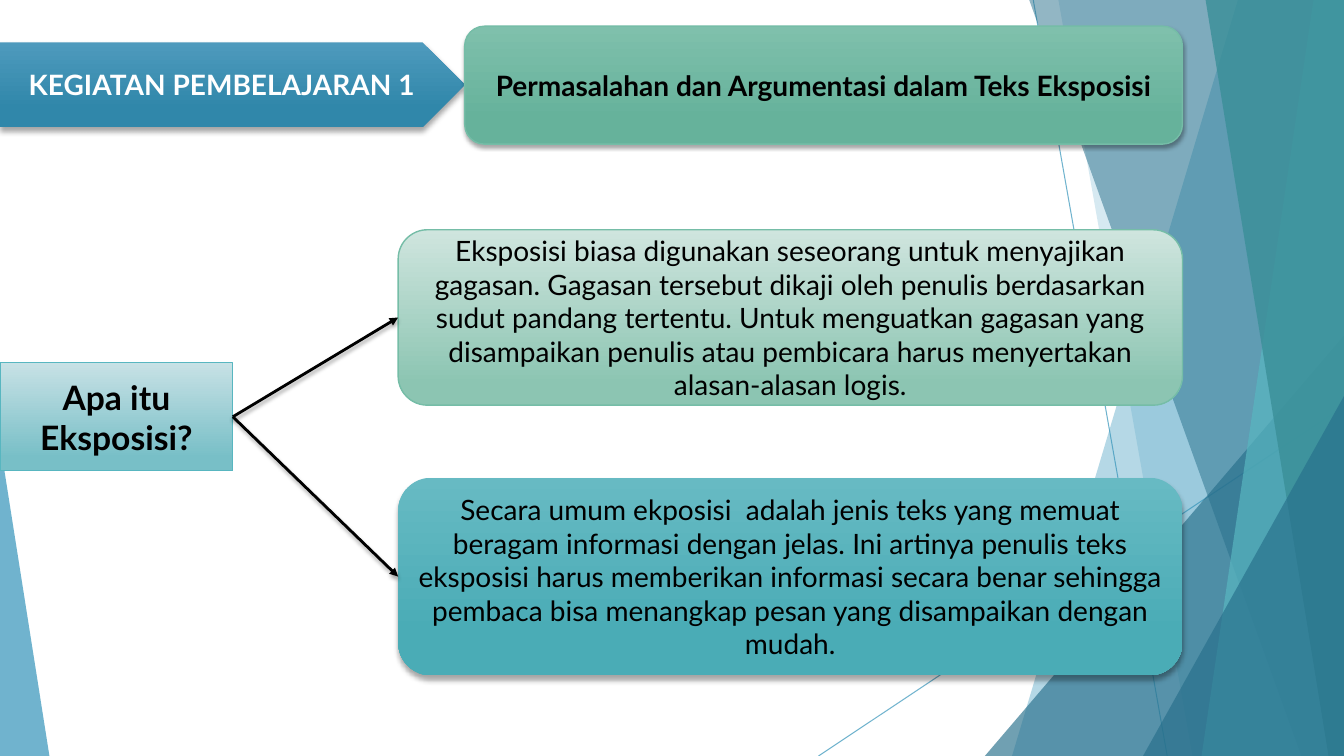
from dataclasses import dataclass

from lxml import etree
from pptx import Presentation
from pptx.dml.color import RGBColor
from pptx.enum.shapes import MSO_CONNECTOR, MSO_SHAPE
from pptx.enum.text import MSO_ANCHOR, MSO_AUTO_SIZE, PP_ALIGN
from pptx.oxml.ns import qn
from pptx.util import Inches, Pt

STRAIGHT = MSO_CONNECTOR.STRAIGHT
RECT = MSO_SHAPE.RECTANGLE
ROUNDED = MSO_SHAPE.ROUNDED_RECTANGLE
TRIANGLE = MSO_SHAPE.ISOSCELES_TRIANGLE
TAG = MSO_SHAPE.PENTAGON
TITLE_CARD = MSO_SHAPE.FLOWCHART_ALTERNATE_PROCESS
MIDDLE = MSO_ANCHOR.MIDDLE
NO_AUTOFIT = MSO_AUTO_SIZE.NONE
CENTER = PP_ALIGN.CENTER
LEFT_SITE, RIGHT_SITE = 1, 3


@dataclass(frozen=True)
class Theme:
    font: str = "Lato"
    body: int = 20
    question: int = 24
    black: str = "000000"
    white: str = "FFFFFF"
    blue: str = "3494BA"
    navy: str = "276F8B"
    aqua: str = "58B6C0"
    teal: str = "3A8F98"
    green: str = "75BDA7"
    # Gradients: top colour, bottom colour, position of the bottom stop
    tag: tuple = ("4E9ABD", "3087AA", 0.78)
    title: tuple = ("7FC0AC", "66B29B", 0.78)
    pale_aqua: tuple = ("C7E1E5", "78BFC7", 0.88)
    pale_green: tuple = ("CFE5DE", "8CC5B2", 0.88)
    deep_aqua: tuple = ("67BAC3", "4AACB6", 0.78)


@dataclass(frozen=True)
class Box:
    x: float
    y: float
    w: float
    h: float

    def inner(self, x, y, w, h):
        """Inner box, given in percent of this one."""
        return Box(self.x + self.w * x / 100, self.y + self.h * y / 100,
                   self.w * w / 100, self.h * h / 100)

    def point(self, x, y):
        corner = self.inner(x, y, 0, 0)
        return int(corner.x), int(corner.y)

    def emu(self):
        return int(self.x), int(self.y), int(self.w), int(self.h)


THEME = Theme()


def rgb(color):
    return RGBColor.from_string(color)


def set_alpha(sp, percent):
    for color in sp._element.spPr.iter(qn("a:srgbClr")):
        etree.SubElement(color, qn("a:alpha"), val=str(percent * 1000))


def set_shadow(sp, blur, distance):
    spPr = sp._element.spPr
    effects = spPr.find(qn("a:effectLst"))
    if effects is None:
        effects = etree.SubElement(spPr, qn("a:effectLst"))
    if blur:
        shadow = etree.SubElement(effects, qn("a:outerShdw"), blurRad=str(Pt(blur)),
                                  dist=str(Pt(distance)), dir="5400000", rotWithShape="0")
        color = etree.SubElement(shadow, qn("a:srgbClr"), val=THEME.black)
        etree.SubElement(color, qn("a:alpha"), val="35000")


def write(sp, text, size, color, bold=False):
    tf = sp.text_frame
    tf.word_wrap = True
    tf.auto_size = NO_AUTOFIT
    tf.vertical_anchor = MIDDLE
    p = tf.paragraphs[0]
    p.text = text
    p.alignment = CENTER
    p.font.name, p.font.size, p.font.bold = THEME.font, Pt(size), bold
    p.font.color.rgb = rgb(color)


def add_card(s, kind, box, gradient, line=None, shadow=(0, 0)):
    sp = s.shapes.add_shape(kind, *box.emu())
    sp.shadow.inherit = False
    top, bottom, end = gradient
    sp.fill.gradient()
    sp.fill.gradient_angle = 270
    for stop, color, position in zip(sp.fill.gradient_stops, (top, bottom), (0, end)):
        stop.color.rgb = rgb(color)
        stop.position = position
    if line:
        sp.line.color.rgb = rgb(line)
        sp.line.width = Pt(1)
    else:
        sp.line.fill.background()
    set_shadow(sp, *shadow)
    return sp


def add_line(s, start, end, color, width):
    line = s.shapes.add_connector(STRAIGHT, *start, *end)
    line.line.color.rgb = rgb(color)
    line.line.width = Pt(width)
    return line


def paint_facet(sp, color, alpha):
    sp.shadow.inherit = False
    sp.fill.solid()
    sp.fill.fore_color.rgb = rgb(color)
    sp.line.fill.background()
    set_alpha(sp, alpha)


def add_strip(s, box, top, bottom, color, alpha):
    """Facet from a slanted left edge to the right side of the box."""
    builder = s.shapes.build_freeform(*box.point(top, 0))
    builder.add_line_segments([box.point(100, 0), box.point(100, 100), box.point(bottom, 100)])
    paint_facet(builder.convert_to_shape(), color, alpha)


def add_triangle(s, box, apex, color, alpha):
    sp = s.shapes.add_shape(TRIANGLE, *box.emu())
    sp.adjustments[0] = apex
    paint_facet(sp, color, alpha)


def add_backdrop(s, box):
    # Thin crossing lines
    for start, end in (((76.88, 0), (86.85, 100)), ((100, 53.73), (60.9, 100))):
        line = add_line(s, box.point(*start), box.point(*end), THEME.blue, 0.75)
        set_alpha(line, 70)
        set_shadow(line, 0, 0)
    # Overlapping facets on the right
    add_strip(s, box, 92.1, 75.3, THEME.blue, 36)
    add_strip(s, box, 78.75, 88.73, THEME.blue, 20)
    add_triangle(s, box.inner(73.28, 44.4, 26.72, 55.6), 1, THEME.navy, 66)
    add_strip(s, box, 76.58, 96.83, THEME.navy, 50)
    add_strip(s, box, 97.73, 89.4, THEME.aqua, 70)
    add_strip(s, box, 89.7, 98.85, THEME.teal, 80)
    add_triangle(s, box.inner(85.05, 52.4, 14.95, 47.6), 1, THEME.navy, 66)
    # Facet in the lower left corner
    add_triangle(s, box.inner(0, 58.53, 3.68, 41.47), 0, THEME.blue, 70)


def add_header(s, box, tag_text, title_text):
    tag = add_card(s, TAG, box.inner(0, 13.68, 39.3, 71.8), THEME.tag, shadow=(4, 3))
    write(tag, tag_text, THEME.body, THEME.white, bold=True)
    title_box = box.inner(39.3, 0, 60.7, 100)
    add_card(s, TITLE_CARD, title_box, THEME.title, THEME.green, (3, 2))
    # Title placeholder, raised above its card
    title = s.shapes.title
    title.left, title.top, title.width, title.height = title_box.emu()
    write(title, title_text, THEME.body, THEME.black, bold=True)
    s.shapes._spTree.append(title._element)


def add_definitions(s, box, question_text, usage_text, meaning_text):
    question = add_card(s, RECT, box.inner(0, 29.86, 19.69, 24.21), THEME.pale_aqua, THEME.aqua)
    write(question, question_text, THEME.question, THEME.black, bold=True)
    usage = add_card(s, ROUNDED, box.inner(33.67, 0, 66.33, 39.37), THEME.pale_green, THEME.green)
    meaning = add_card(s, ROUNDED, box.inner(33.67, 55.66, 66.33, 44.34), THEME.deep_aqua,
                       shadow=(4, 3))
    # Answers and the arrows leading to them
    for card, text in ((usage, usage_text), (meaning, meaning_text)):
        write(card, text, THEME.body, THEME.black)
        arrow = add_line(s, (0, 0), (0, 0), THEME.black, 2)
        arrow.begin_connect(question, RIGHT_SITE)
        arrow.end_connect(card, LEFT_SITE)
        etree.SubElement(arrow.line._get_or_add_ln(), qn("a:tailEnd"), type="triangle")
        set_shadow(arrow, 3, 2)


def main():
    prs = Presentation()
    prs.slide_width, prs.slide_height = Inches(13.33), Inches(7.5)
    s = prs.slides.add_slide(prs.slide_layouts[5])
    page = Box(0, 0, prs.slide_width, prs.slide_height)
    add_backdrop(s, page)
    add_definitions(
        s, page.inner(0, 30.4, 87.98, 58.93),
        "Apa itu Eksposisi?",
        "Eksposisi biasa digunakan seseorang untuk menyajikan gagasan. Gagasan tersebut "
        "dikaji oleh penulis berdasarkan sudut pandang tertentu. Untuk menguatkan gagasan "
        "yang disampaikan penulis atau pembicara harus menyertakan alasan-alasan logis.",
        "Secara umum ekposisi  adalah jenis teks yang memuat beragam informasi dengan jelas. "
        "Ini artinya penulis teks eksposisi harus memberikan informasi secara benar sehingga "
        "pembaca bisa menangkap pesan yang disampaikan dengan mudah.")
    add_header(s, page.inner(0, 3.47, 87.98, 15.6), "KEGIATAN PEMBELAJARAN 1",
               "Permasalahan dan Argumentasi dalam Teks Eksposisi")
    prs.save("out.pptx")


if __name__ == "__main__":
    main()
